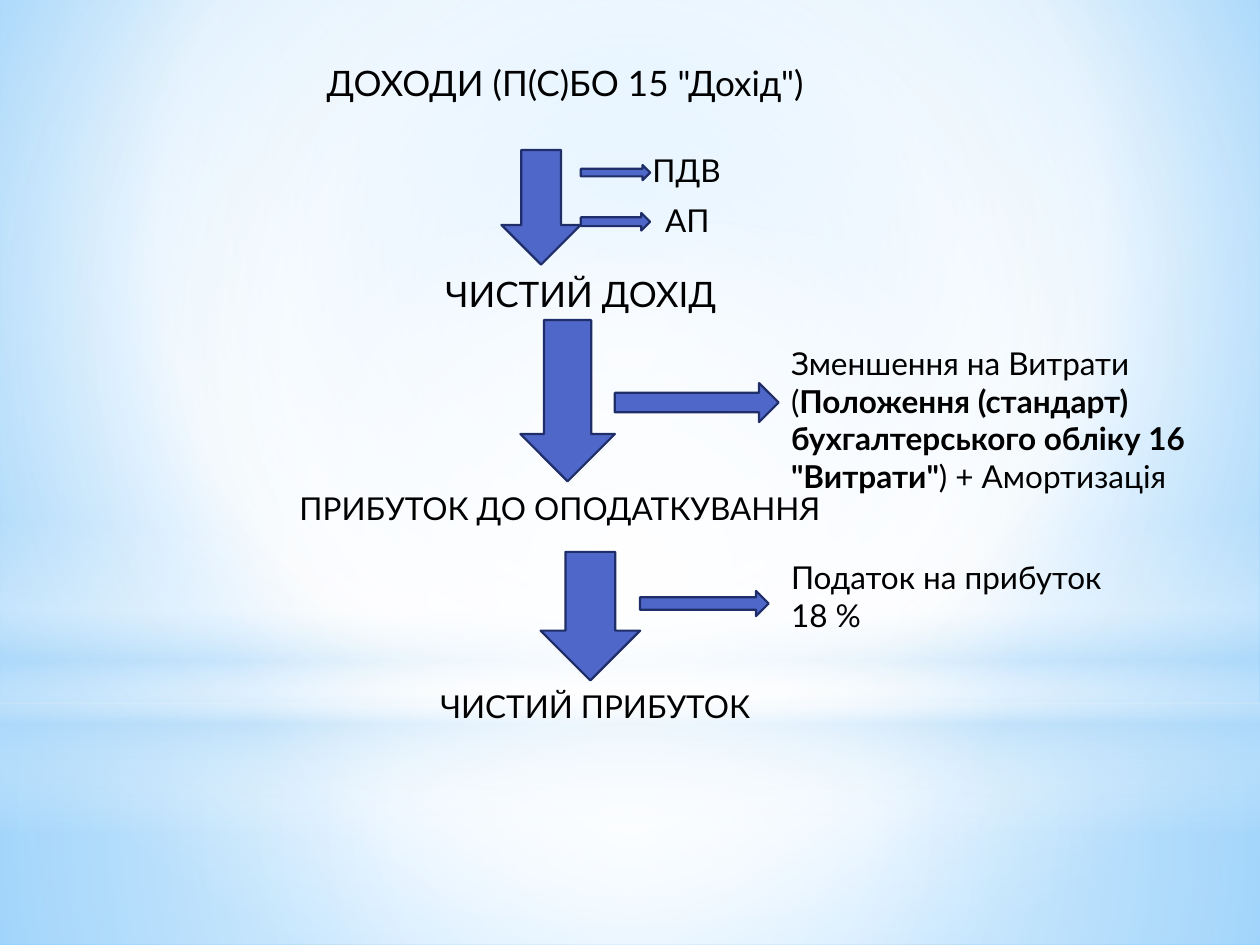
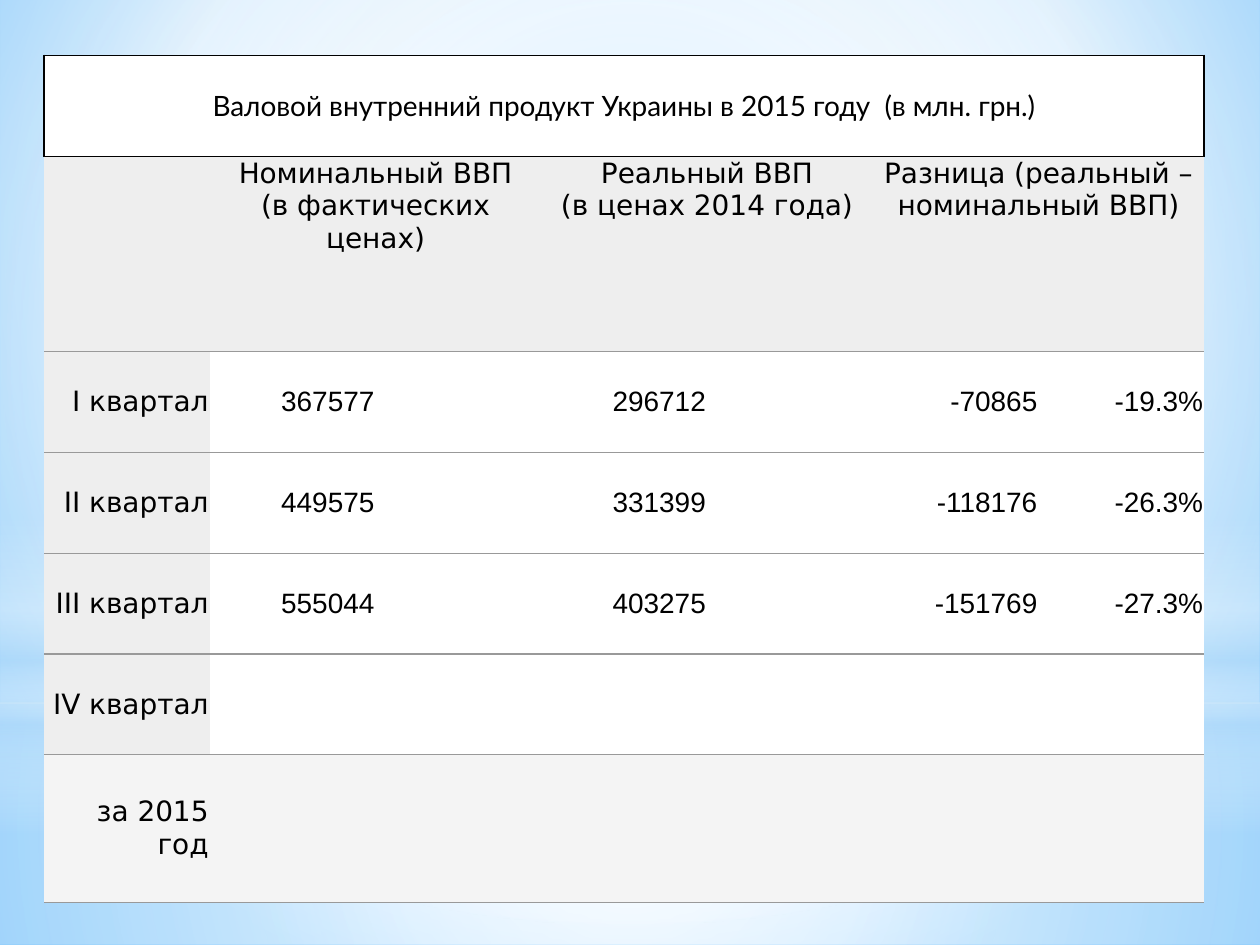
from dataclasses import dataclass

from lxml import etree
from pptx import Presentation
from pptx.dml.color import RGBColor
from pptx.enum.shapes import MSO_SHAPE as Shape
from pptx.enum.text import MSO_ANCHOR as Anchor, MSO_AUTO_SIZE as AutoSize, PP_ALIGN as Align
from pptx.oxml.ns import qn
from pptx.util import Inches, Pt

COLUMNS, ROWS = 100, 75  # page grid
BLACK, WHITE, SKY = "000000", "FFFFFF", "B4DCFA"
ARROW_FILL, ARROW_LINE = "4E67C8", "1F2E69"
HEADER_GREY, TOTAL_GREY, RULE_GREY = "EEEEEE", "F4F4F4", "999999"
TEXT_FONT, LABEL_FONT, NUMBER_FONT = "Lato", "DejaVu Sans", "Arial"
CENTRE = (50, 50, 50, 50)

# Each stage: caption, size, caption box, arrow box, branches.
# A branch: arrow top, length, height; label and its box.
STAGES = [
    ('ДОХОДИ (П(С)БО 15 "Дохід")', 20, (22.4, 4.4, 44.9, 4.4), (39.8, 11.9, 6.3, 9.1), [
        (13.1, 5.5, 1.2, "ПДВ", (50.8, 11.5, 16.5, 4)),
        (16.9, 5.5, 1.4, "АП", (51.8, 15.5, 9.3, 4))]),
    ("ЧИСТИЙ ДОХІД", 20, (26.8, 21.1, 38.6, 4.4), (41.3, 25.4, 7.5, 12.8), [
        (30.4, 13, 3.1, "Зменшення на Витрати (*Положення (стандарт) бухгалтерського "
         'обліку 16 "Витрати"*) + Амортизація', (61.8, 26.8, 37, 13.1))]),
    ("ПРИБУТОК ДО ОПОДАТКУВАННЯ", 18, (16.9, 38.3, 55.1, 4), (42.9, 43.8, 7.9, 10.2), [
        (46.9, 10.2, 2, "Податок на прибуток 18 %", (61.8, 43.8, 27.6, 7.1))]),
    ("ЧИСТИЙ ПРИБУТОК", 18, (24.8, 54, 44.9, 4), None, []),
]

TABLE_TITLE = "Валовой внутренний продукт Украины в 2015 году  (в млн. грн.)"
TABLE_HEADS = ["Номинальный ВВП\n(в фактических ценах)",
               "Реальный ВВП\n(в ценах 2014 года)",
               "Разница (реальный –\nноминальный ВВП)"]
TABLE_ROWS = [
    ["I квартал", "367577", "", "296712", "", "-70865", "-19.3%"],
    ["II квартал", "449575", "", "331399", "", "-118176", "-26.3%"],
    ["III квартал", "555044", "", "403275", "", "-151769", "-27.3%"],
    ["IV квартал"] + [""] * 6,
    ["за 2015 год"] + [""] * 6,
]
ROW_HEIGHTS = [8, 15.5, 8, 8, 8, 8, 11.7]


@dataclass
class Box:
    left: int
    top: int
    width: int
    height: int

    def area(self, left, top, width, height):
        """Box inside this one, in grid columns and rows."""
        column, row = self.width / COLUMNS, self.height / ROWS
        return Box(int(self.left + left * column), int(self.top + top * row),
                   int(width * column), int(height * row))

    def place(self):
        return self.left, self.top, self.width, self.height


def color(code):
    return RGBColor.from_string(code)


def write(frame, text, font=TEXT_FONT, size=18, align=Align.LEFT, code=BLACK):
    """Write one paragraph; asterisks enclose bold words, newlines break lines."""
    para = frame.paragraphs[0]
    para.alignment = align
    for index, piece in enumerate(text.split("*")):
        for number, line in enumerate(piece.split("\n")):
            if number:
                para.add_line_break()
            span = para.add_run()
            span.text = line
            span.font.name, span.font.size = font, Pt(size)
            span.font.bold = index % 2 == 1
            span.font.color.rgb = color(code)


def add_label(page, box, text, **style):
    frame = page.shapes.add_textbox(*box.place()).text_frame
    frame.word_wrap = True
    frame.auto_size = AutoSize.SHAPE_TO_FIT_TEXT
    write(frame, text, **style)


def add_arrow(page, kind, box):
    arrow = page.shapes.add_shape(kind, *box.place())
    arrow.shadow.inherit = False
    arrow.fill.solid()
    arrow.fill.fore_color.rgb = color(ARROW_FILL)
    arrow.line.color.rgb = color(ARROW_LINE)
    arrow.line.width = Pt(1.25)


def set_gradient(element, stops, focus=None):
    """Swap a solid fill for a gradient: radial around focus, else vertical."""
    gradient = etree.Element(qn("a:gradFill"), rotWithShape="1")
    stop_list = etree.SubElement(gradient, qn("a:gsLst"))
    for position, code, opacity in stops:
        stop = etree.SubElement(stop_list, qn("a:gs"), pos=str(position * 1000))
        tint = etree.SubElement(stop, qn("a:srgbClr"), val=code)
        if opacity < 100:
            etree.SubElement(tint, qn("a:alpha"), val=str(opacity * 1000))
    if focus:
        shade = etree.SubElement(gradient, qn("a:path"), path="circle")
        sides = {side: str(share * 1000) for side, share in zip("ltrb", focus)}
        etree.SubElement(shade, qn("a:fillToRect"), **sides)
    else:
        etree.SubElement(gradient, qn("a:lin"), ang="5400000", scaled="0")
    solid = element.xpath(".//a:solidFill")[0]
    solid.getparent().replace(solid, gradient)


def build_backdrop(master, page, box):
    """Give the master its sky background and soft light bands."""
    master.background.fill.solid()
    set_gradient(master.element.xpath("p:cSld/p:bg")[0],
                 [(0, "9ED5FF", 100), (60, WHITE, 100), (100, "5BB9FF", 100)], (20, 10, 20, 60))
    bands = [
        (Shape.RECTANGLE, (0, 55.8, 100, 19.2), CENTRE,
         [(0, WHITE, 91), (37, WHITE, 76), (100, SKY, 79)]),
        (Shape.RECTANGLE, (0, 0, 100, 55.8), CENTRE,
         [(0, WHITE, 89), (48, WHITE, 62), (100, SKY, 79)]),
        (Shape.RECTANGLE, (0, 41.2, 100, 25), None,
         [(0, WHITE, 0), (29, WHITE, 30), (45, SKY, 40),
          (55, WHITE, 26), (65, SKY, 60), (100, WHITE, 0)]),
        (Shape.OVAL, (0, 17.5, 100, 55.8), CENTRE, [(0, WHITE, 100), (56, WHITE, 0)]),
    ]
    for index, (kind, cells, focus, stops) in enumerate(bands):
        band = page.shapes.add_shape(kind, *box.area(*cells).place())
        band.shadow.inherit = False
        band.line.fill.background()
        band.fill.solid()
        set_gradient(band.element, stops, focus)
        # Move the band behind the master's placeholders
        band.element.xpath(".//p:cNvPr")[0].set("id", str(100 + index))
        master.shapes.element.insert(2 + index, band.element)


def build_income_flow(page, box):
    """Chain of captions and down arrows, with deductions branching right."""
    for caption, size, caption_cells, arrow_cells, branches in STAGES:
        add_label(page, box.area(*caption_cells), caption, size=size, align=Align.CENTER)
        if arrow_cells:
            add_arrow(page, Shape.DOWN_ARROW, box.area(*arrow_cells))
        for top, length, height, label, label_cells in branches:
            start = arrow_cells[0] + arrow_cells[2]
            add_arrow(page, Shape.RIGHT_ARROW, box.area(start, top, length, height))
            add_label(page, box.area(*label_cells), label)


def set_borders(cell, **sides):
    """Sides L, R, T, B take (colour, points); the others are cleared."""
    properties = cell._tc.get_or_add_tcPr()
    for index, side in enumerate("LRTB"):
        code, points = sides.get(side, (None, 0))
        line = etree.Element(qn(f"a:ln{side}"), w=str(int(Pt(points))))
        if code:
            solid = etree.SubElement(line, qn("a:solidFill"))
            etree.SubElement(solid, qn("a:srgbClr"), val=code)
        else:
            etree.SubElement(line, qn("a:noFill"))
        properties.insert(index, line)


def fill_cell(cell, text, anchor=Anchor.MIDDLE, **style):
    cell.margin_left = cell.margin_right = Inches(0.01)
    cell.margin_top = cell.margin_bottom = Inches(0.01)
    cell.vertical_anchor = anchor
    write(cell.text_frame, text, size=16, **style)


def cell_shade(row, column):
    if row == len(ROW_HEIGHTS) - 1:
        return TOTAL_GREY
    return HEADER_GREY if row == 1 or (row and not column) else WHITE


def build_product_table(page, box):
    """Quarterly figures under a caption row and paired column heads."""
    row_count, column_count = len(ROW_HEIGHTS), len(TABLE_ROWS[0])
    table = page.shapes.add_table(row_count, column_count, *box.place()).table
    table.first_row = table.horz_banding = False
    for column in table.columns:
        column.width = box.width // column_count
    for row, share in zip(table.rows, ROW_HEIGHTS):
        row.height = int(box.height * share / sum(ROW_HEIGHTS))

    # Shades and rules
    frame, rule = (BLACK, 1), (RULE_GREY, 0.75)
    for row in range(row_count):
        for column in range(column_count):
            cell = table.cell(row, column)
            cell.fill.solid()
            cell.fill.fore_color.rgb = color(cell_shade(row, column))
            if row == 0:
                set_borders(cell, L=frame, R=frame, T=frame, B=frame)
            else:
                set_borders(cell, T=frame if row == 1 else rule, B=rule)

    # Caption and heads
    table.cell(0, 0).merge(table.cell(0, column_count - 1))
    fill_cell(table.cell(0, 0), TABLE_TITLE, align=Align.CENTER)
    for index, head in enumerate(TABLE_HEADS):
        column = 1 + 2 * index
        table.cell(1, column).merge(table.cell(1, column + 1))
        fill_cell(table.cell(1, column), head, anchor=Anchor.TOP,
                  font=LABEL_FONT, align=Align.CENTER)

    # Quarters
    for row, values in enumerate(TABLE_ROWS, start=2):
        for column, value in enumerate(values):
            if value:
                fill_cell(table.cell(row, column), value, align=Align.RIGHT,
                          font=NUMBER_FONT if column else LABEL_FONT)


def main():
    deck = Presentation()
    deck.slide_width, deck.slide_height = Inches(10), Inches(7.5)
    whole = Box(0, 0, deck.slide_width, deck.slide_height)
    blank = deck.slide_layouts[6]

    flow_page = deck.slides.add_slide(blank)
    build_backdrop(deck.slide_master, flow_page, whole)
    build_income_flow(flow_page, whole)

    table_page = deck.slides.add_slide(blank)
    build_product_table(table_page, whole.area(3.5, 4.4, 92.1, 67.2))
    deck.save("out.pptx")


if __name__ == "__main__":
    main()
